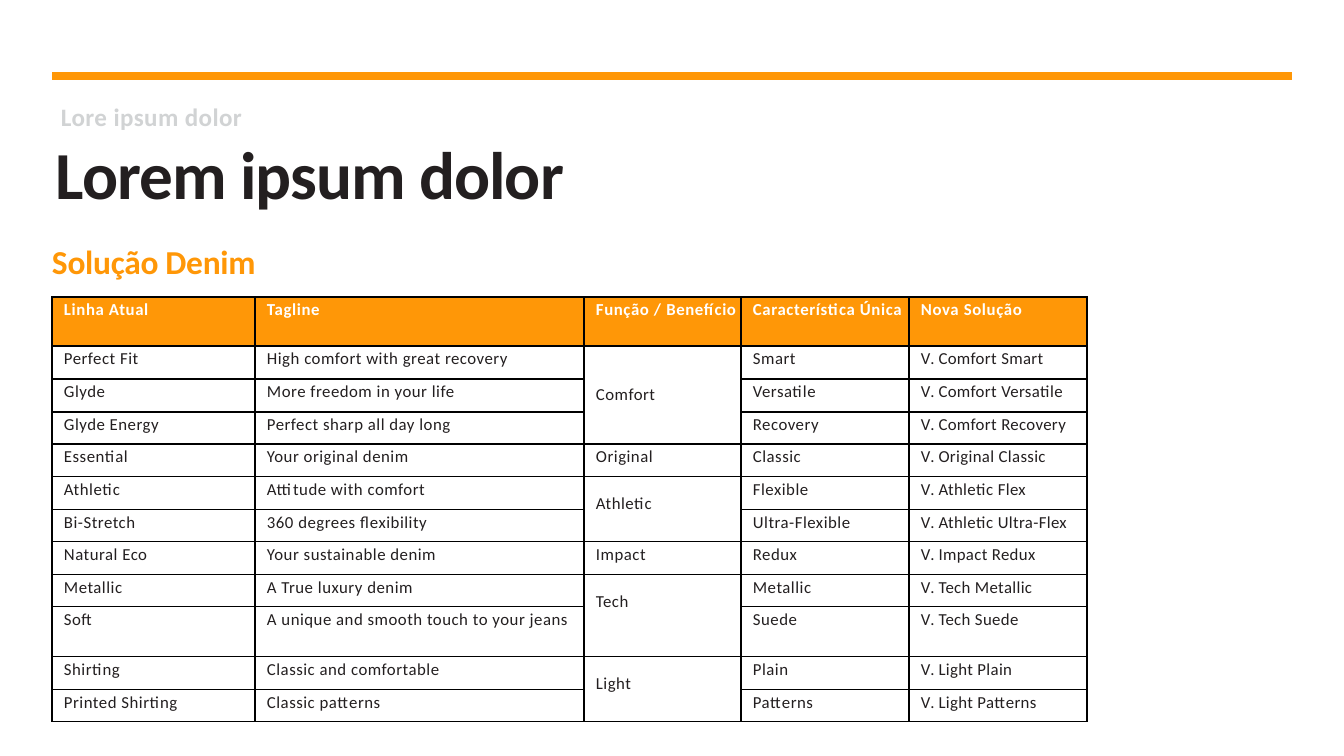
from itertools import pairwise

from lxml.etree import SubElement
from pptx import Presentation
from pptx.dml.color import RGBColor
from pptx.enum.shapes import MSO_CONNECTOR as Connector
from pptx.enum.text import MSO_ANCHOR as Anchor, PP_ALIGN as Align
from pptx.oxml.ns import qn
from pptx.util import Emu, Pt

PX_PER_INCH = 100.8
ORANGE, INK, GREY, WHITE, BLACK = "FF9707", "231F20", "D1D3D4", "FFFFFF", "000000"

COLUMN_EDGES = [52, 255, 584, 741, 909, 1087]
ROW_EDGES = [297, 346, 379, 412, 444, 477, 510, 542, 575, 607, 657, 690, 722]
FUNCTION_COLUMN = 2
SOLUTION_COLUMN = 4

HEADINGS = ["Linha Atual", "Tagline", "Função / Benefício", "Característica Única", "Nova Solução"]
# Each function or benefit heads the lines that share it.
SOLUTIONS = {
    "Comfort": [
        ("Perfect Fit", "High comfort with great recovery", "Smart", "Comfort Smart"),
        ("Glyde", "More freedom in your life", "Versatile", "Comfort Versatile"),
        ("Glyde Energy", "Perfect sharp all day long", "Recovery", "Comfort Recovery"),
    ],
    "Original": [("Essential", "Your original denim", "Classic", "Original Classic")],
    "Athletic": [
        ("Athletic", "Attitude with comfort", "Flexible", "Athletic Flex"),
        ("Bi-Stretch", "360 degrees flexibility", "Ultra-Flexible", "Athletic Ultra-Flex"),
    ],
    "Impact": [("Natural Eco", "Your sustainable denim", "Redux", "Impact Redux")],
    "Tech": [
        ("Metallic", "A True luxury denim", "Metallic", "Tech Metallic"),
        ("Soft", "A unique and smooth touch to your jeans", "Suede", "Tech Suede"),
    ],
    "Light": [
        ("Shirting", "Classic and comfortable", "Plain", "Light Plain"),
        ("Printed Shirting", "Classic patterns", "Patterns", "Light Patterns"),
    ],
}
# Top margin in px of a label, by the number of rows it spans.
LABEL_TOP = {1: 3, 2: 17, 3: 39}


def px(length):
    return Emu(round(length * 914400 / PX_PER_INCH))


def color(hex_string):
    return RGBColor.from_string(hex_string)


def set_margins(target, left, top):
    target.margin_left, target.margin_top = px(left), px(top)
    target.margin_right = target.margin_bottom = 0


def write(frame, text, *, size, ink, bold=False, spacing=0.0):
    """Write one left-aligned paragraph; text may be a list of (text, spacing) runs."""
    paragraph = frame.paragraphs[0]
    paragraph.alignment = Align.LEFT
    runs = [(text, spacing)] if isinstance(text, str) else text
    for run_text, run_spacing in runs:
        run = paragraph.add_run()
        run.text = run_text
        font = run.font
        font.name, font.size, font.bold = "Calibri", Pt(size), bold
        font.color.rgb = color(ink)
        run._r.get_or_add_rPr().set("spc", str(round(run_spacing * 100)))


class SlideBuilder:
    def __init__(self, slide):
        self.slide = slide

    def rule(self, left, right, y, width):
        line = self.slide.shapes.add_connector(Connector.STRAIGHT, px(left), px(y), px(right), px(y))
        line.line.color.rgb = color(ORANGE)
        line.line.width = Pt(width)
        SubElement(line._element.spPr, qn("a:effectLst"))

    def place_text(self, shape, box, text, anchor, **style):
        shape.left, shape.top, shape.width, shape.height = map(px, box)
        frame = shape.text_frame
        frame.word_wrap = True
        frame.vertical_anchor = anchor
        set_margins(frame, 1, 1)
        write(frame, text, bold=True, **style)

    def title(self, box, text, **style):
        self.place_text(self.slide.shapes.title, box, text, Anchor.MIDDLE, **style)

    def label(self, box, text, **style):
        shape = self.slide.shapes.add_textbox(*map(px, box))
        self.place_text(shape, box, text, Anchor.TOP, **style)

    def cell(self, cell, text, *, top=3, background=None, ink=INK, bold=False, spacing=0.37):
        properties = cell._tc.get_or_add_tcPr()
        for side in "LRTB":
            border = SubElement(properties, qn(f"a:ln{side}"), w=str(Pt(1)))
            solid = SubElement(border, qn("a:solidFill"))
            SubElement(solid, qn("a:srgbClr"), val=BLACK)
        if background:
            cell.fill.solid()
            cell.fill.fore_color.rgb = color(background)
        else:
            cell.fill.background()
        set_margins(cell, 12, top)
        cell.vertical_anchor = Anchor.TOP
        write(cell.text_frame, text, size=12, ink=ink, bold=bold, spacing=spacing)

    def empty_table(self):
        left, right = COLUMN_EDGES[0], COLUMN_EDGES[-1]
        top, bottom = ROW_EDGES[0], ROW_EDGES[-1]
        table = self.slide.shapes.add_table(
            len(ROW_EDGES) - 1, len(COLUMN_EDGES) - 1,
            px(left), px(top), px(right - left), px(bottom - top)).table
        table.first_row = table.horz_banding = False
        for column, (start, end) in zip(table.columns, pairwise(COLUMN_EDGES)):
            column.width = px(end - start)
        for row, (start, end) in zip(table.rows, pairwise(ROW_EDGES)):
            row.height = px(end - start)
        return table

    def solution_table(self):
        table = self.empty_table()
        for column, heading in enumerate(HEADINGS):
            self.cell(table.cell(0, column), heading, background=ORANGE,
                      ink=WHITE, bold=True, spacing=0.45)
        row = 1
        for function, lines in SOLUTIONS.items():
            span = len(lines)
            label = table.cell(row, FUNCTION_COLUMN)
            if span > 1:
                label.merge(table.cell(row + span - 1, FUNCTION_COLUMN))
            self.cell(label, function, top=LABEL_TOP[span])
            for name, tagline, feature, solution in lines:
                for column, text in ((0, name), (1, tagline), (3, feature)):
                    self.cell(table.cell(row, column), text)
                self.cell(table.cell(row, SOLUTION_COLUMN),
                          [("V", -0.9), (". ", 0), (solution, 0.25)])
                row += 1


def main():
    presentation = Presentation()
    presentation.slide_width, presentation.slide_height = px(1344), px(756)
    title_only = presentation.slide_layouts[5]
    builder = SlideBuilder(presentation.slides.add_slide(title_only))
    builder.rule(1292, 52, 76, 6)
    builder.label((60, 100, 316, 31), "Lore ipsum dolor", size=17.9, ink=GREY, spacing=0.3)
    builder.solution_table()
    builder.label((51, 240, 273, 41), "Solução Denim", size=23.9, ink=ORANGE, spacing=-0.2)
    builder.title((55, 131, 616, 83), "Lorem ipsum dolor", size=48, ink=INK, spacing=-0.7)
    presentation.save("out.pptx")


if __name__ == "__main__":
    main()
